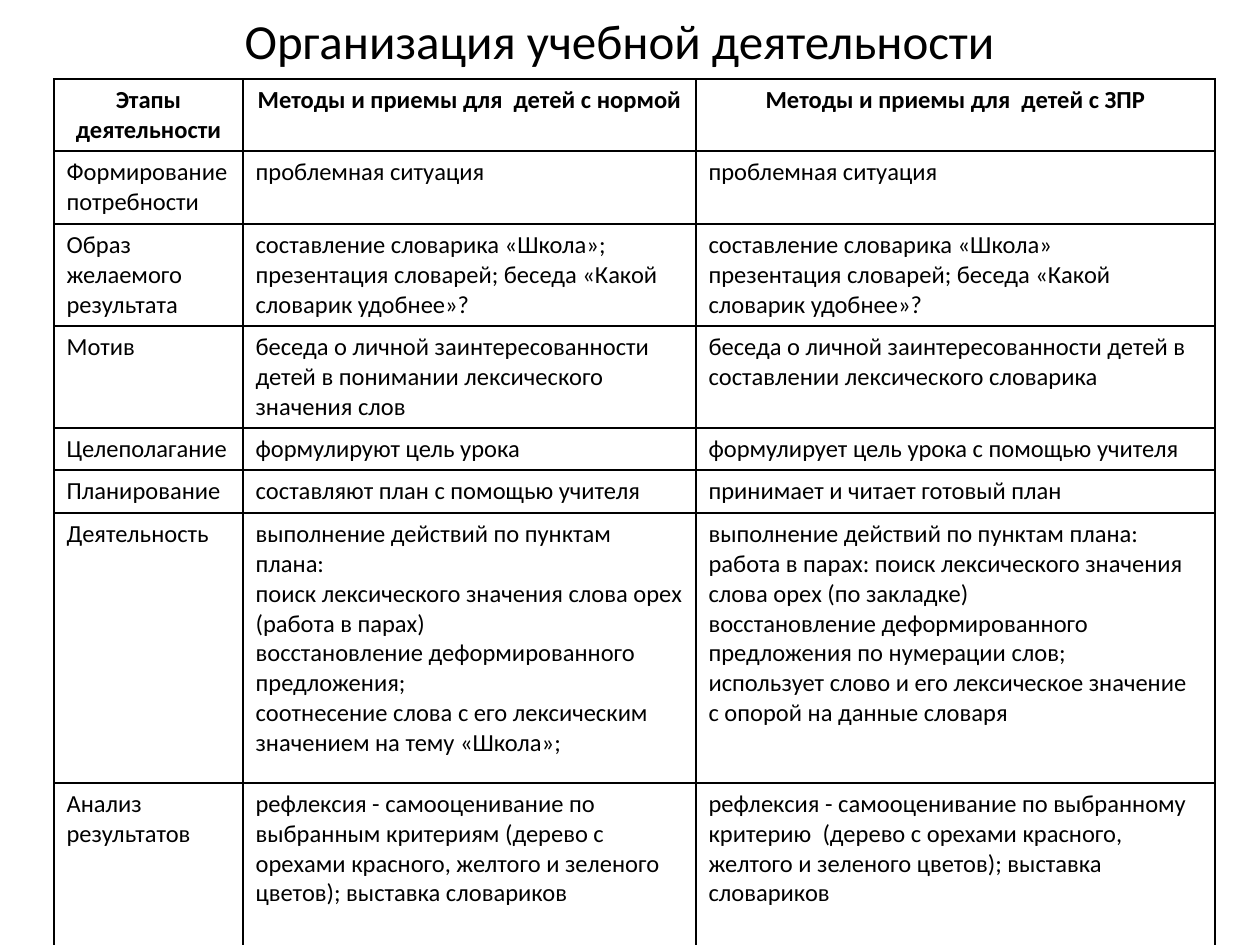
from pptx import Presentation
from pptx.dml.color import RGBColor
from pptx.enum.text import MSO_ANCHOR as Anchor, PP_ALIGN as Align
from pptx.oxml import parse_xml
from pptx.oxml.ns import nsdecls
from pptx.util import Emu, Pt

BLACK = RGBColor(0, 0, 0)
FONT = "Calibri"
SCALE = 914400 / 126

COLS = [189, 453, 519]
ROWS = [72, 73, 102, 102, 42, 43, 270, 163]
# Each cell is a list of paragraphs.
CELLS = [
    [["Этапы деятельности"],
     ["Методы и приемы для  детей с нормой"],
     ["Методы и приемы для  детей с ЗПР"]],
    [["Формирование потребности"],
     ["проблемная ситуация"],
     ["проблемная ситуация"]],
    [["Образ желаемого результата"],
     ["составление словарика «Школа»; презентация словарей; "
      "беседа «Какой словарик удобнее»?"],
     ["составление словарика «Школа»",
      "презентация словарей; беседа «Какой словарик удобнее»?"]],
    [["Мотив"],
     ["беседа о личной заинтересованности детей в понимании "
      "лексического значения слов"],
     ["беседа о личной заинтересованности детей в составлении "
      "лексического словарика"]],
    [["Целеполагание"],
     ["формулируют цель урока"],
     ["формулирует цель урока с помощью учителя"]],
    [["Планирование"],
     ["составляют план с помощью учителя"],
     ["принимает и читает готовый план"]],
    [["Деятельность"],
     ["выполнение действий по пунктам плана:",
      "поиск лексического значения слова орех (работа в парах)",
      "восстановление деформированного предложения;",
      "соотнесение слова с его лексическим значением на тему «Школа»;"],
     ["выполнение действий по пунктам плана:",
      "работа в парах: поиск лексического значения слова орех (по закладке)",
      "восстановление деформированного предложения по нумерации слов;",
      "использует слово и его лексическое значение с опорой на данные словаря"]],
    [["Анализ результатов"],
     ["рефлексия - самооценивание по выбранным критериям (дерево с орехами "
      "красного, желтого и зеленого цветов); выставка словариков"],
     ["рефлексия - самооценивание по выбранному критерию  (дерево с орехами "
      "красного, желтого и зеленого цветов); выставка словариков"]],
]


def px(n):
    return Emu(round(n * SCALE))


def write(frame, lines, size, align, bold=False):
    """Put each line in its own paragraph of the frame."""
    frame.word_wrap = True
    for i, line in enumerate(lines):
        para = frame.add_paragraph() if i else frame.paragraphs[0]
        para.alignment = align
        run = para.add_run()
        run.text = line
        font = run.font
        font.name, font.size, font.bold = FONT, Pt(size), bold
        font.color.rgb = BLACK


def frame_cell(cell):
    """Draw a thin black line on all four sides of the cell."""
    props = cell._tc.get_or_add_tcPr()
    for i, side in enumerate(("lnL", "lnR", "lnT", "lnB")):
        props.insert(i, parse_xml(
            f'<a:{side} {nsdecls("a")} w="{Pt(1)}"><a:solidFill>'
            f'<a:srgbClr val="{BLACK}"/></a:solidFill></a:{side}>'))


def add_title(slide, x, y, w, h):
    frame = slide.shapes.add_textbox(px(x), px(y), px(w), px(h)).text_frame
    frame.vertical_anchor = Anchor.MIDDLE
    write(frame, ["Организация учебной деятельности"], 28, Align.CENTER)


def add_grid(slide, x, y):
    table = slide.shapes.add_table(
        len(ROWS), len(COLS), px(x), px(y),
        px(sum(COLS)), px(sum(ROWS))).table
    table.horz_banding = False
    for col, w in zip(table.columns, COLS):
        col.width = px(w)
    for r, (row, h) in enumerate(zip(table.rows, ROWS)):
        row.height = px(h)
        head = r == 0
        for cell, lines in zip(row.cells, CELLS[r]):
            cell.fill.background()
            frame_cell(cell)
            write(cell.text_frame, lines, 14,
                  Align.CENTER if head else Align.LEFT, head)


def main():
    deck = Presentation()
    deck.slide_width, deck.slide_height = px(1260), px(945)
    slide = deck.slides.add_slide(deck.slide_layouts[6])
    add_title(slide, 203, 0, 833, 79)
    add_grid(slide, 54, 79)
    deck.save("out.pptx")


if __name__ == "__main__":
    main()
